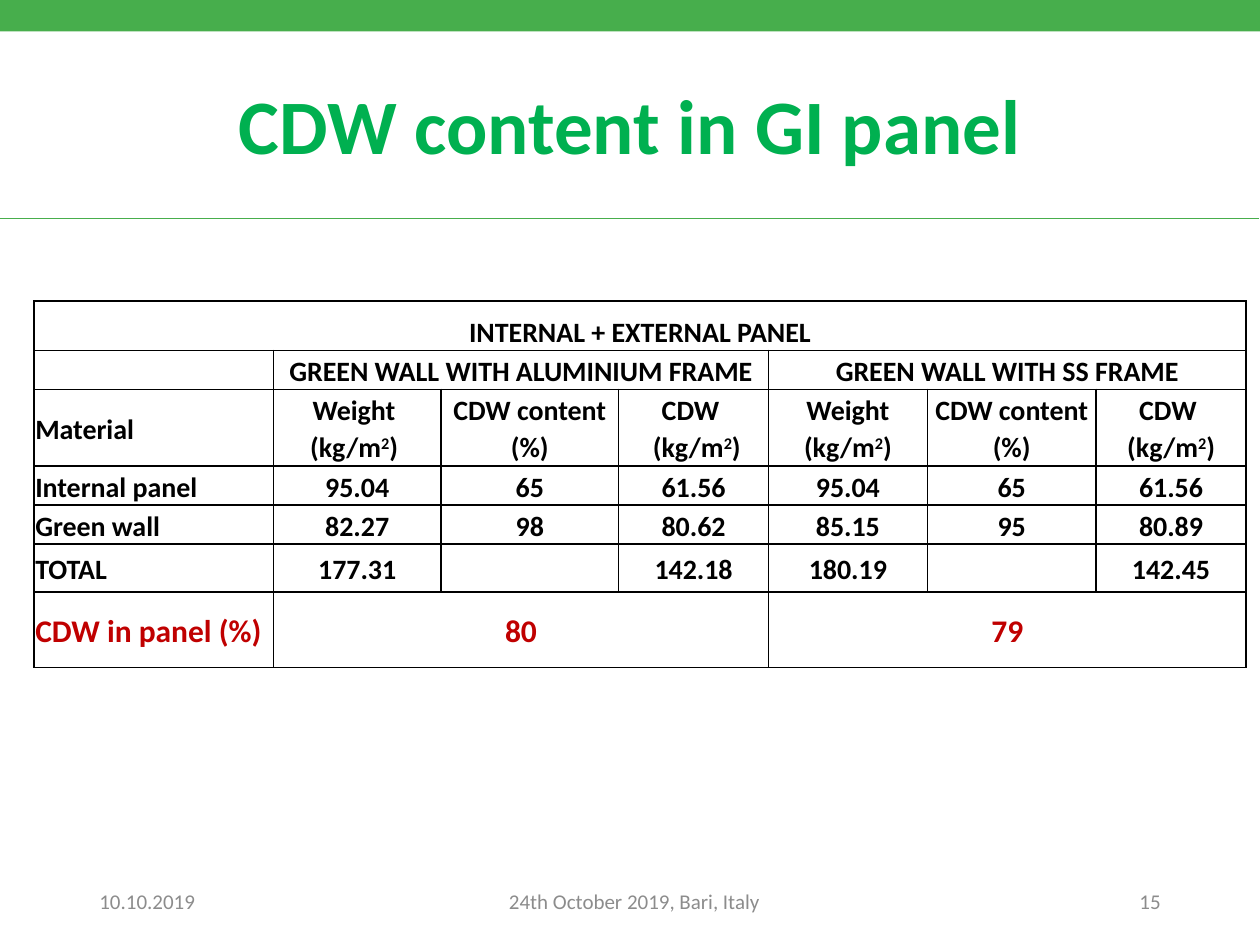
from pptx import Presentation
from pptx.dml.color import RGBColor
from pptx.enum.shapes import MSO_CONNECTOR, MSO_SHAPE
from pptx.enum.text import MSO_ANCHOR, PP_ALIGN
from pptx.oxml.ns import qn
from pptx.util import Inches, Pt
from lxml import etree

LEFT, CENTER, RIGHT = PP_ALIGN.LEFT, PP_ALIGN.CENTER, PP_ALIGN.RIGHT
MIDDLE, BOTTOM = MSO_ANCHOR.MIDDLE, MSO_ANCHOR.BOTTOM
STRAIGHT, RECTANGLE = MSO_CONNECTOR.STRAIGHT, MSO_SHAPE.RECTANGLE

COLORS = {"band": "47AE4C", "title": "00B050", "footer": "8C8C8C",
          "text": "000000", "result": "C00000"}
FONT = "Calibri"
COLUMN_WIDTHS = [1.9, 1.33, 1.41, 1.19, 1.26, 1.34, 1.19]
ROW_HEIGHTS = [0.39, 0.31, 0.61, 0.31, 0.31, 0.38, 0.6]
HEADINGS = ["Weight\n(kg/m²)", "CDW content\n(%)", "CDW \n(kg/m²)"]
ROWS = [
    ["INTERNAL + EXTERNAL PANEL", "", "", "", "", "", ""],
    ["", "GREEN WALL WITH ALUMINIUM FRAME", "", "", "GREEN WALL WITH SS FRAME", "", ""],
    ["Material", "Weight \n(kg/m²) ", "CDW content\n(%)", "CDW \n (kg/m²)", *HEADINGS],
    ["Internal panel", "95.04", "65", "61.56", "95.04", "65", "61.56"],
    ["Green wall", "82.27", "98", "80.62", "85.15", "95", "80.89"],
    ["TOTAL", "177.31", "", "142.18", "180.19", "", "142.45"],
    ["CDW in panel (%)", "80", "", "", "79", "", ""],
]
MERGES = [(0, 0, 6), (1, 1, 3), (1, 4, 6), (6, 1, 3), (6, 4, 6)]
BOTTOM_CELLS = {(0, 0), (1, 1), (1, 4), (4, 5), (4, 6)}


def rgb(name):
    return RGBColor.from_string(COLORS[name])


def style_paragraph(paragraph, size, color, align, bold=False):
    paragraph.alignment = align
    font = paragraph.font
    font.name, font.size, font.bold = FONT, Pt(size), bold
    font.color.rgb = rgb(color)


def add_band(slide):
    shape = slide.shapes.add_shape(RECTANGLE, 0, 0, Inches(10), Inches(0.25))
    shape.shadow.inherit = False
    shape.fill.solid()
    shape.fill.fore_color.rgb = rgb("band")
    shape.line.fill.background()


def add_rule(slide):
    line = slide.shapes.add_connector(
        STRAIGHT, Inches(-0.01), Inches(1.73), Inches(9.99), Inches(1.73))
    line.line.color.rgb = rgb("band")
    line.line.width = Pt(0.5)
    etree.SubElement(line._element.spPr, qn("a:effectLst"))


def set_title(slide, text):
    title = slide.shapes.title
    title.left, title.top = Inches(0), Inches(0.4)
    title.width, title.height = Inches(10), Inches(1.25)
    title.text_frame.text = text
    title.text_frame.vertical_anchor = MIDDLE
    paragraph = title.text_frame.paragraphs[0]
    style_paragraph(paragraph, 44, "title", CENTER, bold=True)
    paragraph.line_spacing = 0.9


def add_footer(slide, text, left, width, align):
    box = slide.shapes.add_textbox(Inches(left), Inches(6.95), Inches(width), Inches(0.4))
    frame = box.text_frame
    frame.word_wrap = True
    frame.vertical_anchor = MIDDLE
    frame.text = text
    style_paragraph(frame.paragraphs[0], 12, "footer", align)


def add_borders(cell):
    properties = cell._tc.get_or_add_tcPr()
    for index, side in enumerate(("lnL", "lnR", "lnT", "lnB")):
        line = etree.Element(qn(f"a:{side}"), w=str(Pt(1)))
        fill = etree.SubElement(line, qn("a:solidFill"))
        etree.SubElement(fill, qn("a:srgbClr"), val=COLORS["text"])
        properties.insert(index, line)


def write_line(paragraph, text):
    """Write one line, raising the 2 of a square unit as superscript."""
    before, square, after = text.partition("²")
    for part, raised in ((before, False), ("2" if square else "", True), (after, False)):
        if part:
            run = paragraph.add_run()
            run.text = part
            if raised:
                run._r.get_or_add_rPr().set("baseline", "30000")


def fill_cell(cell, text, size, color, align, anchor):
    cell.margin_left = cell.margin_right = cell.margin_top = Inches(0.01)
    cell.margin_bottom = 0
    cell.vertical_anchor = anchor
    cell.fill.background()
    add_borders(cell)
    frame = cell.text_frame
    for index, line in enumerate(text.split("\n")):
        paragraph = frame.add_paragraph() if index else frame.paragraphs[0]
        write_line(paragraph, line)
        style_paragraph(paragraph, size, color, align, bold=True)
        paragraph.line_spacing = 1.07


def add_panel_table(slide):
    table = slide.shapes.add_table(
        len(ROWS), len(COLUMN_WIDTHS), Inches(0.27), Inches(2.39),
        Inches(sum(COLUMN_WIDTHS)), Inches(sum(ROW_HEIGHTS))).table
    table.first_row = table.horz_banding = False
    for column, width in zip(table.columns, COLUMN_WIDTHS):
        column.width = Inches(width)
    for row, height in zip(table.rows, ROW_HEIGHTS):
        row.height = Inches(height)
    for r, values in enumerate(ROWS):
        size, color = (18, "result") if r == len(ROWS) - 1 else (16, "text")
        for c, text in enumerate(values):
            align = LEFT if c == 0 and r > 0 else CENTER
            anchor = BOTTOM if (r, c) in BOTTOM_CELLS else MIDDLE
            fill_cell(table.cell(r, c), text, size, color, align, anchor)
    for r, first, last in MERGES:
        table.cell(r, first).merge(table.cell(r, last))


def main():
    presentation = Presentation()
    presentation.slide_width, presentation.slide_height = Inches(10), Inches(7.5)
    slide = presentation.slides.add_slide(presentation.slide_layouts[5])
    add_band(slide)
    add_rule(slide)
    set_title(slide, "CDW content in GI panel")
    add_footer(slide, "10.10.2019", 0.69, 1.12, LEFT)
    add_footer(slide, "24th October 2019, Bari, Italy", 3.31, 3.45, CENTER)
    add_footer(slide, "15", 8.33, 0.98, RIGHT)
    add_panel_table(slide)
    presentation.save("out.pptx")


if __name__ == "__main__":
    main()
